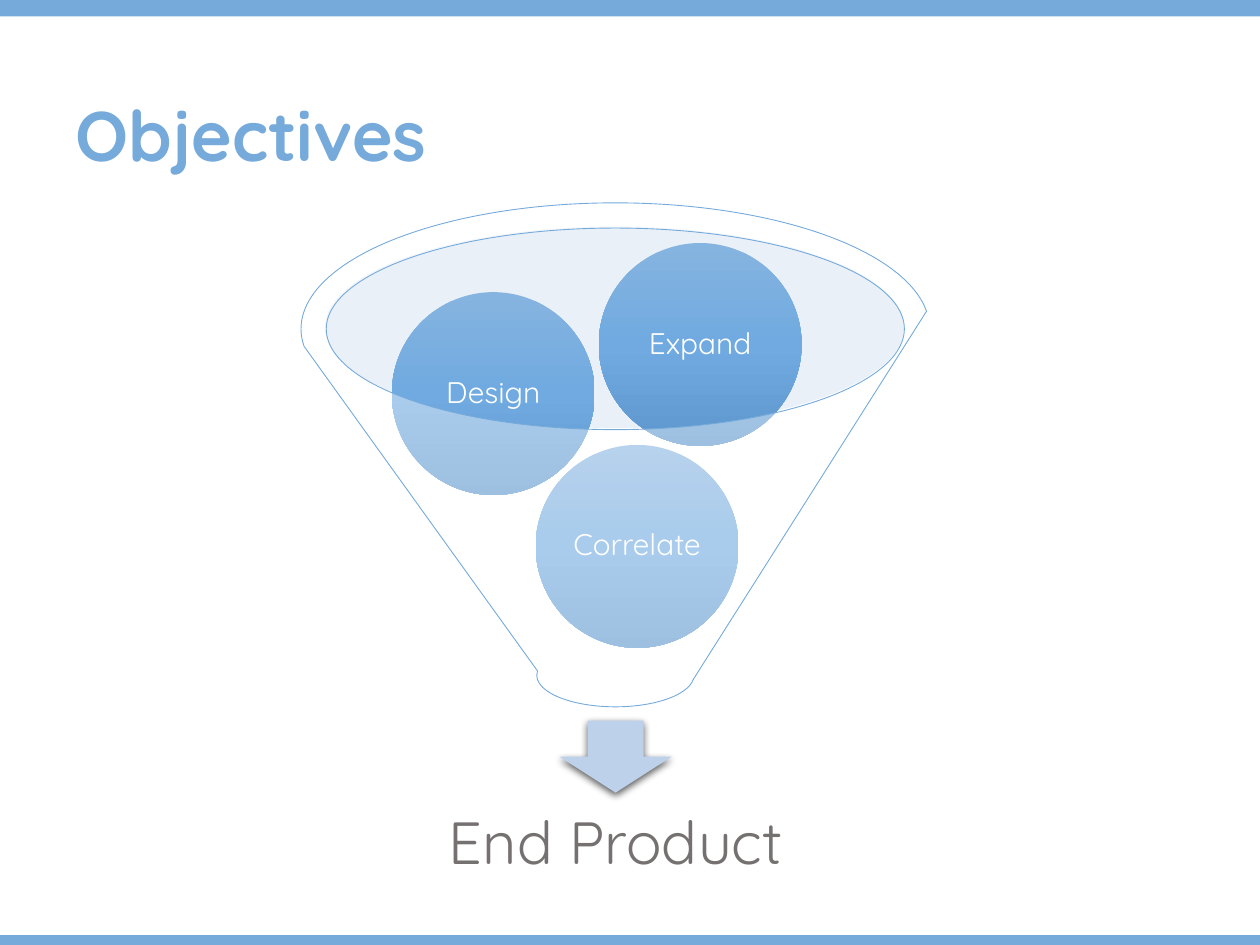
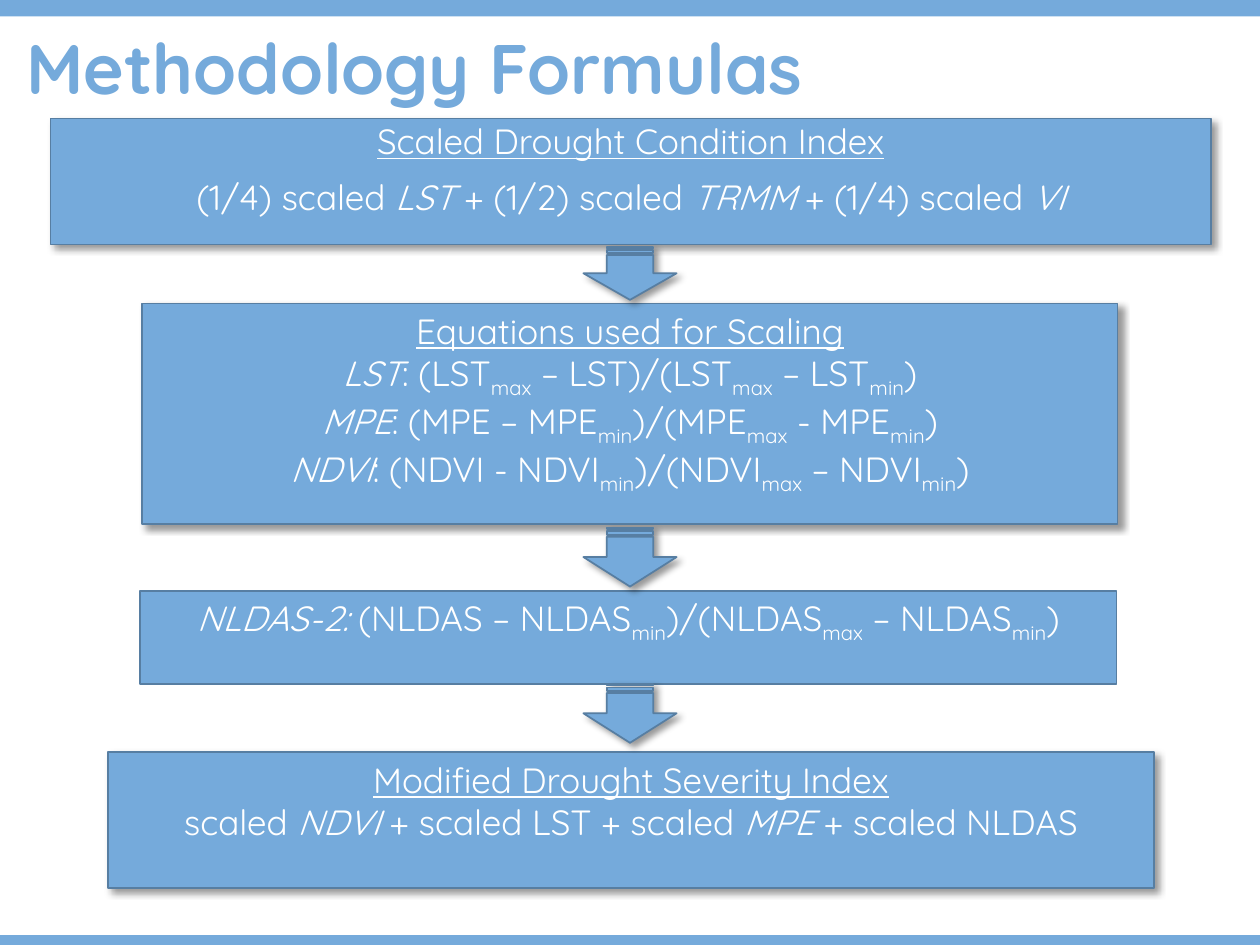
"""Build two slides: the objectives funnel and the drought index formulas."""
from copy import deepcopy

from lxml import etree
from pptx import Presentation
from pptx import util as u
from pptx.dml import color
from pptx.enum import shapes, text
from pptx.oxml import ns

FONT = "Quicksand"
BLUE, EDGE, PALE, ICE = "75AADB", "577EA2", "BDD1EA", "CADAEE"
GREY, WHITE, BLACK = "767171", "FFFFFF", "000000"
BALL_SHADES = ["86B4E0", "70AAE0", "5D97CD"]
BOX_SHADOW = (40, 4, 3, 45)
MARKS = {"=": "underline", "^": "italic"}
KIND = shapes.MSO_SHAPE
TOP, MIDDLE, BOTTOM = (text.MSO_ANCHOR.TOP, text.MSO_ANCHOR.MIDDLE,
                       text.MSO_ANCHOR.BOTTOM)


def rgb(code):
    return color.RGBColor.from_string(code)


class Deck:
    def __init__(self):
        self.show = Presentation()
        self.show.slide_width, self.show.slide_height = u.Cm(25.4), u.Cm(19.05)
        self.layout = self.show.slide_layouts[5]
        self.slide = None

    def add_slide(self, heading, place):
        first = self.slide is None
        self.slide = self.show.slides.add_slide(self.layout)
        if first:
            self.band(0, 0.33, 21)
            self.band(18.85, 0.2, 22)
        title = self.slide.shapes.title
        title.left, title.top, title.width, title.height = map(u.Cm, place)
        self.set_text(title, [heading], 40, BLUE, BOTTOM, spacing=0.9,
                      align=text.PP_ALIGN.LEFT, bold=True)

    def band(self, top, height, number):
        strip = self.shape(KIND.RECTANGLE, (0, top, 25.4, height), BLUE)
        strip._element.nvSpPr.cNvPr.set("id", str(number))
        self.layout.shapes._spTree.insert(2, strip._element)

    def shape(self, kind, place, fill=None, line=None, weight=1, alpha=None,
              shadow=None):
        item = self.slide.shapes.add_shape(kind, *map(u.Cm, place))
        item.shadow.inherit = False
        if fill:
            item.fill.solid()
            item.fill.fore_color.rgb = rgb(fill)
        if alpha:
            self.fade(item._element.spPr.find(".//" + ns.qn("a:srgbClr")), alpha)
        if line:
            item.line.color.rgb = rgb(line)
            item.line.width = u.Pt(weight)
        else:
            item.line.fill.background()
        if shadow:
            self.cast_shadow(item, *shadow)
        return item

    def fade(self, tint, percent):
        etree.SubElement(tint, ns.qn("a:alpha"), val=str(percent * 1000))

    def cast_shadow(self, item, percent, blur, distance, angle):
        effects = item._element.spPr.find(ns.qn("a:effectLst"))
        outer = etree.SubElement(
            effects, ns.qn("a:outerShdw"), blurRad=str(u.Pt(blur)),
            dist=str(u.Pt(distance)), dir=str(angle * 60000), rotWithShape="0")
        self.fade(etree.SubElement(outer, ns.qn("a:srgbClr"), val=BLACK), percent)

    def ball(self, label, left, top):
        item = self.shape(KIND.OVAL, (left, top, 4.09, 4.09))
        item.fill.gradient()
        item.fill.gradient_angle = 270
        first = item._element.spPr.find(".//" + ns.qn("a:gs"))
        first.addnext(deepcopy(first))
        for step, (stop, shade) in enumerate(zip(item.fill.gradient_stops, BALL_SHADES)):
            stop.position = step / 2
            stop.color.rgb = rgb(shade)
        self.set_text(item, [label], 17, WHITE, MIDDLE, spacing=0.9, inset=0)

    def label(self, words, place, size, tint):
        item = self.slide.shapes.add_textbox(*map(u.Cm, place))
        self.set_text(item, [words], size, tint, MIDDLE, spacing=0.9)

    def formula_box(self, lines, place, shadow=BOX_SHADOW, spacing=1, gap=0):
        item = self.shape(KIND.RECTANGLE, place, BLUE, EDGE, shadow=shadow)
        self.set_text(item, lines, 20, WHITE, TOP, spacing=spacing, gap=gap)

    def step_arrow(self, middle, length, center=12.7, breadth=1.88):
        place = (center - length / 2, middle - breadth / 2, length, breadth)
        arrow = self.shape(KIND.STRIPED_RIGHT_ARROW, place, BLUE, EDGE,
                           shadow=BOX_SHADOW)
        arrow.rotation = 90

    def set_text(self, item, lines, size, tint, anchor, spacing=1, gap=0,
                 align=text.PP_ALIGN.CENTER, bold=False, inset=None):
        frame = item.text_frame
        frame.word_wrap = True
        frame.auto_size = text.MSO_AUTO_SIZE.NONE
        frame.vertical_anchor = anchor
        if inset is not None:
            frame.margin_left = frame.margin_right = u.Cm(inset)
        for index, line in enumerate(lines):
            paragraph = frame.add_paragraph() if index else frame.paragraphs[0]
            paragraph.alignment = align
            paragraph.line_spacing = spacing
            paragraph.space_before = u.Pt(gap if index else 0)
            font = paragraph.font
            font.name, font.size, font.bold = FONT, u.Pt(size), bold
            font.color.rgb = rgb(tint)
            for piece in line.split("|"):
                self.add_run(paragraph, piece)

    def add_run(self, paragraph, piece):
        run = paragraph.add_run()
        mark = piece[0]
        run.text = piece[1:] if mark in "=^_" else piece
        if mark in MARKS:
            setattr(run.font, MARKS[mark], True)
        elif mark == "_":
            run._r.get_or_add_rPr().set("baseline", "-25000")


def objectives(deck):
    deck.add_slide("Objectives", (1.27, 0, 9.91, 3.68))
    deck.shape(KIND.OVAL, (6.55, 4.57, 11.68, 4.06), ICE, alpha=40)
    deck.shape(KIND.DOWN_ARROW, (11.28, 14.53, 2.26, 1.45), PALE,
               shadow=(63, 4.5, 1.5, 90))
    deck.label("End Product", (6.98, 15.67, 10.87, 2.72), 34, GREY)
    for goal, left, top in [("Correlate", 10.8, 8.97), ("Design", 7.9, 5.89),
                            ("Expand", 12.07, 4.9)]:
        deck.ball(goal, left, top)
    deck.shape(KIND.FUNNEL, (6.07, 4.09, 12.67, 10.16), WHITE, BLUE, 0.5, alpha=40)


def formulas(deck):
    deck.add_slide("Methodology Formulas", (0.28, 0.23, 18.69, 2.11))
    deck.formula_box(
        ["=Scaled Drought Condition Index",
         "(1/4) scaled |^LST| + (1/2) scaled |^TRMM| + (1/4) scaled |^VI"],
        (1.02, 2.39, 23.39, 2.54), spacing=0.9, gap=10)
    deck.formula_box(
        ["=Equations used for Scaling",
         "^LST|: (LST|_max| – LST)/(LST|_max| – LST|_min|)",
         "^MPE|: (MPE – MPE|_min|)/(MPE|_max| - MPE|_min|)",
         "^NDVI|: (NDVI - NDVI|_min|)/(NDVI|_max| – NDVI|_min|)"],
        (2.87, 6.12, 19.66, 4.45))
    deck.formula_box(
        ["^NLDAS-2:| (NLDAS – NLDAS|_min|)/(NLDAS|_max| – NLDAS|_min|)"],
        (2.82, 11.91, 19.69, 1.88), shadow=None)
    deck.formula_box(
        ["=Modified Drought Severity Index",
         "scaled |^NDVI| + scaled LST + scaled |^MPE| + scaled NLDAS"],
        (2.18, 15.16, 21.08, 2.74))
    for middle, length in [(5.51, 1.07), (11.23, 1.19), (14.38, 1.19)]:
        deck.step_arrow(middle, length)


def main():
    deck = Deck()
    objectives(deck)
    formulas(deck)
    deck.show.save("out.pptx")


if __name__ == "__main__":
    main()
